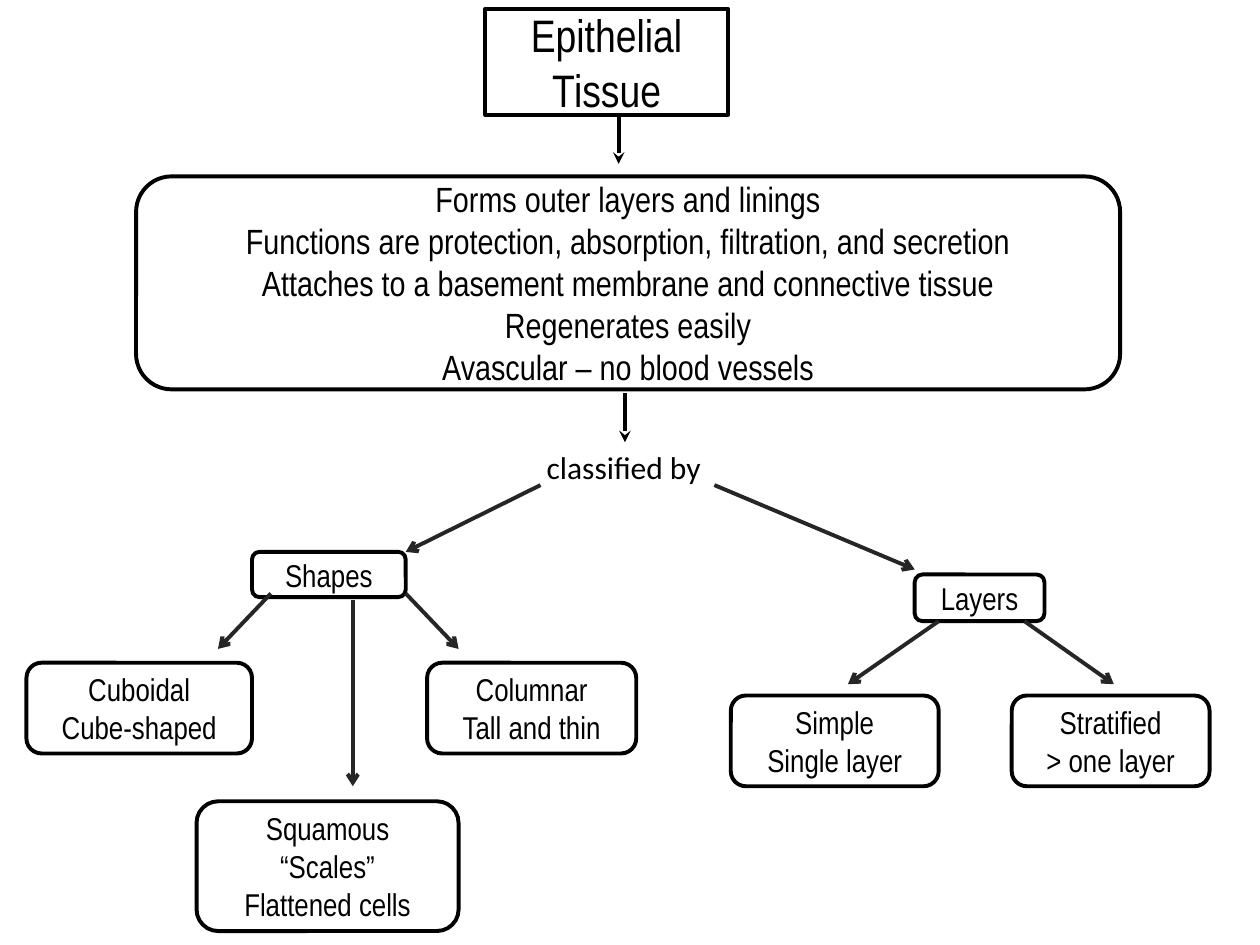
from lxml.etree import SubElement
from pptx import Presentation
from pptx.dml.color import RGBColor
from pptx.enum.shapes import MSO_CONNECTOR as Link, MSO_SHAPE as Shape
from pptx.enum.text import MSO_ANCHOR as Anchor, MSO_AUTO_SIZE as Fit, PP_ALIGN as Align
from pptx.oxml.ns import qn
from pptx.util import Pt

PX = 9144  # 100 px to the inch
COLORS = {"ink": "000000", "soft": "262626", "paper": "FFFFFF"}
NARROW, PLAIN = "Arial Narrow", "Calibri"
FRAME = {"vertical_anchor": Anchor.MIDDLE, "word_wrap": True, "auto_size": Fit.NONE}
LABEL = {"vertical_anchor": Anchor.TOP, "word_wrap": False,
         "auto_size": Fit.SHAPE_TO_FIT_TEXT}


def color(name):
    return RGBColor.from_string(COLORS[name])


def emu(base, *spots):
    """Turn x, y pairs relative to base into EMU."""
    return [(base[i % 2] + spot) * PX for i, spot in enumerate(spots)]


def area(base, rect):
    return emu(base, *rect[:2]) + [size * PX for size in rect[2:]]


def write(shape, lines, size, font=NARROW, align=Align.CENTER, frame=FRAME):
    text = shape.text_frame
    for key, value in frame.items():
        setattr(text, key, value)
    text.text = "\n".join(lines)
    style = {"name": font, "size": Pt(size), "bold": False}
    for para in text.paragraphs:
        para.alignment = align
        for key, value in style.items():
            setattr(para.runs[0].font, key, value)
        para.runs[0].font.color.rgb = color("ink")


def paint(shape):
    shape.fill.solid()
    shape.fill.fore_color.rgb = color("paper")
    shape.line.color.rgb = color("ink")
    shape.line.width = Pt(2.25)


def node(slide, base, rect, lines, size=18):
    """Add a rounded box of centred lines."""
    shape = slide.shapes.add_shape(Shape.ROUNDED_RECTANGLE, *area(base, rect))
    shape.shadow.inherit = False
    paint(shape)
    write(shape, lines, size)


def arrow(slide, base, ends, ink="soft", head="arrow"):
    link = slide.shapes.add_connector(Link.STRAIGHT, *emu(base, *ends))
    link.line.color.rgb = color(ink)
    link.line.width = Pt(2.25)
    SubElement(link.line._get_or_add_ln(), qn("a:tailEnd"), type=head)
    SubElement(link._element.spPr, qn("a:effectLst"))
    return link


def heading(slide, base, rect, words):
    """Shape the title placeholder as a rounded box."""
    title = slide.shapes.title
    title.left, title.top, title.width, title.height = area(base, rect)
    geom = SubElement(title._element.spPr, qn("a:prstGeom"), prst="roundRect")
    SubElement(geom, qn("a:avLst"))
    paint(title)
    write(title, [words], 26)
    title.text_frame.paragraphs[0].line_spacing = 1.0


def overview(slide, base):
    heading(slide, base, (277, 0, 193, 84), "Epithelial Tissue")
    node(slide, base, (0, 133, 781, 169), [
        "Forms outer layers and linings",
        "Functions are protection, absorption, filtration, and secretion",
        "Attaches to a basement membrane and connective tissue",
        "Regenerates easily",
        "Avascular – no blood vessels"], 20)
    label = slide.shapes.add_textbox(*area(base, (316, 344, 144, 40)))
    write(label, ["classified by"], 18, PLAIN, Align.LEFT, LABEL)
    arrow(slide, base, (383, 84, 383, 123), "ink", "stealth")
    down = arrow(slide, base, (388, 305, 388, 344), "ink", "stealth")
    down.end_connect(label, 0)
    for ends in ((321, 378, 214, 431), (459, 378, 618, 445)):
        arrow(slide, base, ends)


def branch(slide, base, nodes, links):
    for rect, lines in nodes:
        node(slide, base, rect, lines)
    for ends in links:
        arrow(slide, base, ends)


def main():
    deck = Presentation()
    deck.slide_width, deck.slide_height = 1000 * PX, 750 * PX
    slide = deck.slides.add_slide(deck.slide_layouts[5])
    overview(slide, (108, 7))
    branch(slide, (21, 438), [
        ((179, 0, 122, 36), ["Shapes"]),
        ((0, 88, 179, 72), ["Cuboidal", "Cube-shaped"]),
        ((318, 88, 166, 72), ["Columnar", "Tall and thin"]),
        ((135, 198, 208, 103), ["Squamous", "“Scales”", "Flattened cells"]),
    ], [(194, 33, 152, 77), (301, 33, 343, 77), (259, 38, 259, 186)])
    branch(slide, (580, 456), [
        ((146, 0, 103, 37), ["Layers"]),
        ((0, 96, 165, 72), ["Simple", "Single layer"]),
        ((223, 96, 157, 72), ["Stratified", "> one layer"]),
    ], [(165, 37, 93, 87), (233, 37, 304, 87)])
    deck.save("out.pptx")


if __name__ == "__main__":
    main()
